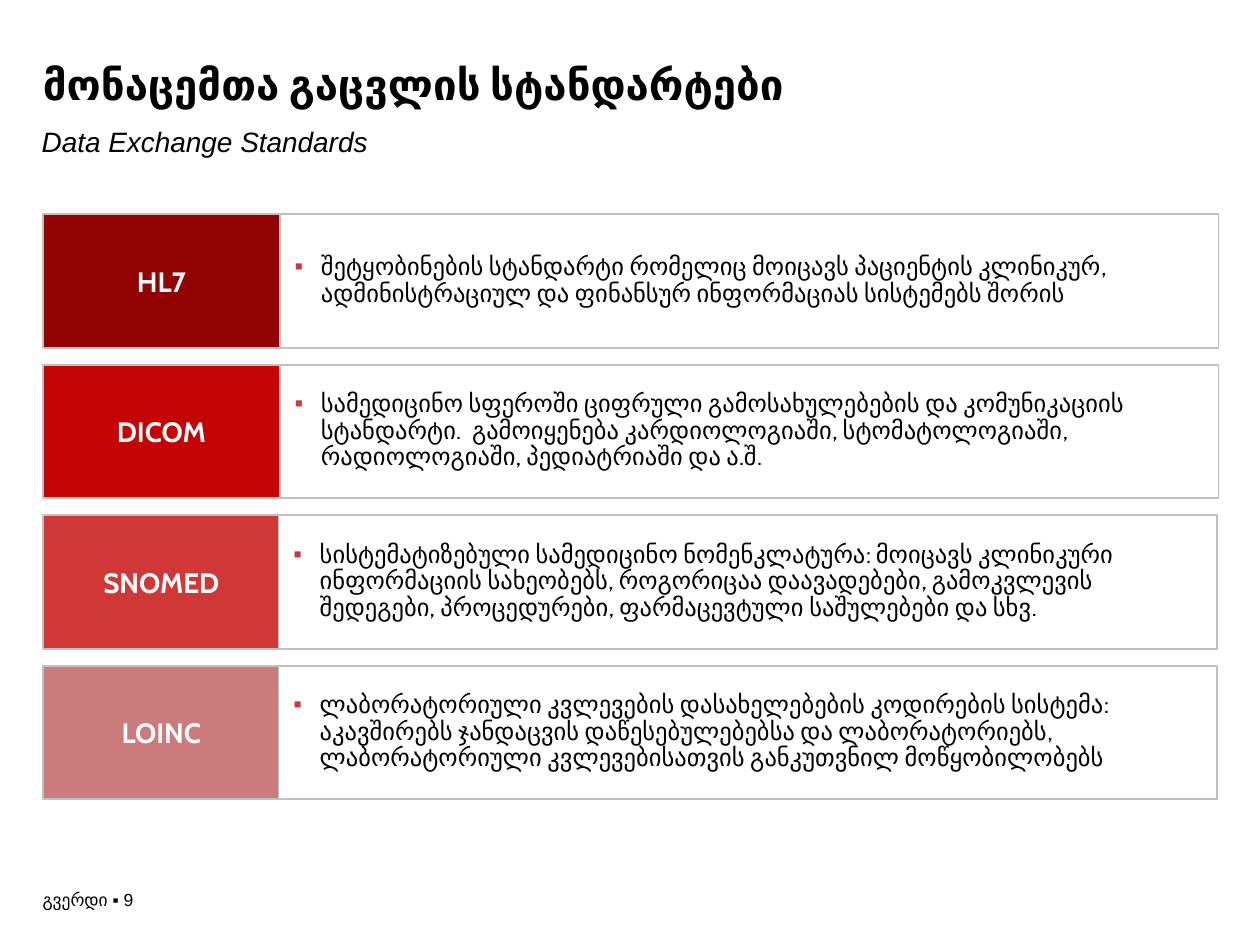
from dataclasses import dataclass

from lxml.etree import SubElement
from pptx import Presentation
from pptx.dml.color import RGBColor
from pptx.enum.shapes import MSO_SHAPE
from pptx.enum.text import MSO_ANCHOR, PP_ALIGN
from pptx.oxml.ns import qn
from pptx.slide import Slide
from pptx.util import Pt

COLOURS = {
    "text": "000000",
    "white": "FFFFFF",
    "border": "C0C0C0",
    "bullet": "D03737",
    "HL7": "920404",
    "DICOM": "C40505",
    "SNOMED": "D03737",
    "LOINC": "CB7B7B",
}

STANDARDS = {
    "HL7": "შეტყობინების სტანდარტი რომელიც მოიცავს პაციენტის კლინიკურ, "
           "ადმინისტრაციულ და ფინანსურ ინფორმაციას სისტემებს შორის",
    "DICOM": "სამედიცინო სფეროში ციფრული გამოსახულებების და კომუნიკაციის "
             "სტანდარტი.  გამოიყენება კარდიოლოგიაში, სტომატოლოგიაში, "
             "რადიოლოგიაში, პედიატრიაში და ა.შ.",
    "SNOMED": "სისტემატიზებული სამედიცინო ნომენკლატურა: მოიცავს კლინიკური "
              "ინფორმაციის სახეობებს, როგორიცაა დაავადებები, გამოკვლევის "
              "შედეგები, პროცედურები, ფარმაცევტული საშულებები და სხვ.",
    "LOINC": "ლაბორატორიული კვლევების დასახელებების კოდირების სისტემა: "
             "აკავშირებს ჯანდაცვის დაწესებულებებსა და ლაბორატორიებს, "
             "ლაბორატორიული კვლევებისათვის განკუთვნილ მოწყობილობებს",
}


def colour(name):
    return RGBColor.from_string(COLOURS[name])


@dataclass
class SlideBuilder:
    page: Slide
    heading_font: str = "Cabin"
    plain_font: str = "Arial"

    def fill_text(self, box, text, size, font, ink="text", align=PP_ALIGN.LEFT,
                  anchor=MSO_ANCHOR.MIDDLE, insets=(0, 0, 0, 0), bold=False, italic=False):
        frame = box.text_frame
        frame.word_wrap = True
        frame.vertical_anchor = anchor
        (frame.margin_left, frame.margin_top,
         frame.margin_right, frame.margin_bottom) = map(Pt, insets)
        para = frame.paragraphs[0]
        para.text = text
        para.alignment = align
        para.font.name = font
        para.font.size = Pt(size)
        para.font.bold = bold
        para.font.italic = italic
        para.font.color.rgb = colour(ink)
        return para

    def text(self, left, top, width, height, text, size, font, **style):
        box = self.page.shapes.add_textbox(*map(Pt, (left, top, width, height)))
        return self.fill_text(box, text, size, font, **style)

    def panel(self, left, top, width, height, fill):
        box = self.page.shapes.add_shape(
            MSO_SHAPE.RECTANGLE, *map(Pt, (left, top, width, height)))
        box.shadow.inherit = False
        box.fill.solid()
        box.fill.fore_color.rgb = colour(fill)
        box.line.color.rgb = colour("border")
        box.line.width = Pt(1)
        return box

    def label(self, left, top, width, height, name):
        box = self.panel(left, top, width, height, name)
        self.fill_text(box, name, 16, self.heading_font, ink="white",
                       align=PP_ALIGN.CENTER, bold=True)

    def description(self, left, top, width, height, text):
        box = self.panel(left, top, width, height, "white")
        para = self.fill_text(box, text, 14, self.heading_font, insets=(8.5, 6, 6, 6))
        para.line_spacing = 0.9
        para.space_before = Pt(1.4)
        self.bullet(para)

    def bullet(self, para):
        properties = para._p.get_or_add_pPr()
        properties.set("marL", str(Pt(15)))
        properties.set("indent", str(-Pt(15)))
        bullet_colour = SubElement(properties, qn("a:buClr"))
        SubElement(bullet_colour, qn("a:srgbClr"), val=COLOURS["bullet"])
        SubElement(properties, qn("a:buFont"), typeface=self.plain_font)
        SubElement(properties, qn("a:buChar"), char="▪")
        defaults = properties.find(qn("a:defRPr"))
        if defaults is not None:
            properties.append(defaults)


def main():
    deck = Presentation()
    deck.slide_width, deck.slide_height = Pt(720), Pt(540)
    builder = SlideBuilder(deck.slides.add_slide(deck.slide_layouts[6]))

    builder.text(17.3, 504.7, 106, 19.5, "გვერდი ▪ 9", 10, builder.plain_font,
                 anchor=MSO_ANCHOR.TOP, insets=(7.2, 3.6, 7.2, 3.6))
    heading_insets = (0, 3.6, 0, 3.6)
    title = builder.text(24.5, 25.2, 591, 47.5, "მონაცემთა გაცვლის სტანდარტები",
                         24, builder.heading_font, insets=heading_insets, bold=True)
    subtitle = builder.text(23.8, 63.4, 591, 36, "Data Exchange Standards",
                            16, builder.plain_font, insets=heading_insets, italic=True)
    title.line_spacing = subtitle.line_spacing = 0.95

    left, top, pitch, height = 24.5, 122.4, 86, 76.3
    label_width, description_width = 135.4, 536.4
    for row, (name, text) in enumerate(STANDARDS.items()):
        row_top = top + row * pitch
        description_left = left + label_width - (0.7 if row >= 2 else 0)
        builder.label(left, row_top, label_width, height, name)
        builder.description(description_left, row_top, description_width, height, text)

    deck.save("out.pptx")


if __name__ == "__main__":
    main()
